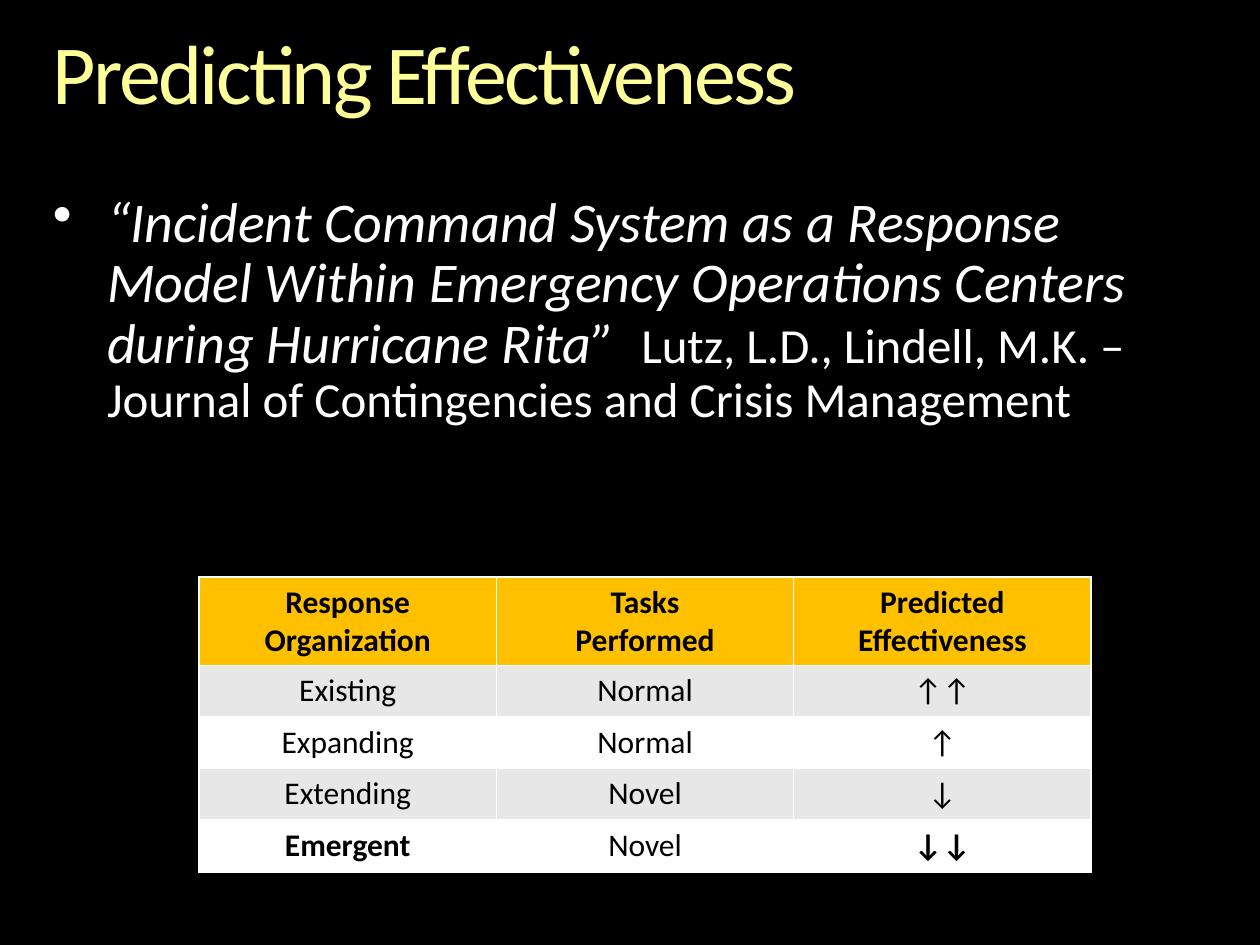
from lxml.etree import SubElement
from pptx import Presentation
from pptx.dml.color import RGBColor
from pptx.enum.text import MSO_ANCHOR, PP_ALIGN
from pptx.oxml import parse_xml
from pptx.oxml.ns import nsdecls, qn
from pptx.util import Inches, Pt

FONT = "Calibri"
TABLE_ROWS = [
    ["Response Organization", "Tasks\nPerformed", "Predicted\nEffectiveness"],
    ["Existing", "Normal", "↑↑"],
    ["Expanding", "Normal", "↑"],
    ["Extending", "Novel", "↓"],
    ["Emergent", "Novel", "↓↓"],
]
BOLD_CELLS = {"Emergent", "↓↓"}


def color(value):
    """Turn a hex string into a colour."""
    return RGBColor.from_string(value)


def style(font, size, value, bold=False):
    """Set the face, size, colour and weight of a font."""
    font.name = FONT
    font.size = Pt(size)
    font.bold = bold
    font.color.rgb = color(value)


def add_text_box(slide, left, top, width, height):
    """Add a wrapping text box without insets and return its paragraph."""
    shape = slide.shapes.add_textbox(*map(Inches, (left, top, width, height)))
    frame = shape.text_frame
    frame.word_wrap = True
    frame.margin_left = frame.margin_right = 0
    frame.margin_top = frame.margin_bottom = 0
    paragraph = frame.paragraphs[0]
    paragraph.line_spacing = 0.9
    return paragraph


def add_title(slide, left, top, width, height):
    """Add the tightly spaced slide title."""
    paragraph = add_text_box(slide, left, top, width, height)
    run = paragraph.add_run()
    run.text = "Predicting Effectiveness"
    run._r.get_or_add_rPr().set("spc", "-150")
    style(paragraph.font, 48, "FFFF99")


def add_citation(slide, left, top, width, height):
    """Add the bulleted article title with its authors and journal."""
    paragraph = add_text_box(slide, left, top, width, height)
    properties = paragraph._p.get_or_add_pPr()
    properties.set("marL", str(Inches(0.43)))
    properties.set("indent", str(Inches(-0.43)))
    SubElement(properties, qn("a:buChar")).set("char", "•")
    style(paragraph.font, 32, "FFFFFF")
    article = paragraph.add_run()
    article.text = ("“Incident Command System as a Response Model Within "
                    "Emergency Operations Centers during Hurricane Rita”  ")
    article.font.italic = True
    source = paragraph.add_run()
    source.text = ("Lutz, L.D., Lindell, M.K. – Journal of Contingencies "
                   "and Crisis Management")
    source.font.size = Pt(28)


def add_borders(cell, value, width):
    """Draw a line on each side of a table cell."""
    properties = cell._tc.get_or_add_tcPr()
    for index, side in enumerate("LRTB"):
        properties.insert(index, parse_xml(
            f'<a:ln{side} {nsdecls("a")} w="{Pt(width)}"><a:solidFill>'
            f'<a:srgbClr val="{value}"/></a:solidFill></a:ln{side}>'))


def add_effectiveness_table(slide, left, top, width, row_height):
    """Add the table of organizations, tasks and predicted effectiveness."""
    row_count, column_count = len(TABLE_ROWS), len(TABLE_ROWS[0])
    table = slide.shapes.add_table(
        row_count, column_count, Inches(left), Inches(top), Inches(width),
        Inches(row_height * row_count)).table
    for row, texts in enumerate(TABLE_ROWS):
        fill = "FFC000" if row == 0 else "E7E7E7" if row % 2 else "FFFFFF"
        for column, text in enumerate(texts):
            cell = table.cell(row, column)
            cell.fill.solid()
            cell.fill.fore_color.rgb = color(fill)
            cell.vertical_anchor = MSO_ANCHOR.TOP
            cell.text = text
            for paragraph in cell.text_frame.paragraphs:
                paragraph.alignment = PP_ALIGN.CENTER
                style(paragraph.font, 18, "000000",
                      row == 0 or text in BOLD_CELLS)
            add_borders(cell, "FFFFFF", 1)


def main():
    """Build and save the slide."""
    presentation = Presentation()
    presentation.slide_width = Inches(10)
    presentation.slide_height = Inches(7.5)
    slide = presentation.slides.add_slide(presentation.slide_layouts[6])
    slide.background.fill.solid()
    slide.background.fill.fore_color.rgb = color("000000")
    add_title(slide, 0.42, 0.25, 9.17, 0.73)
    add_citation(slide, 0.42, 1.54, 9.17, 2.4)
    add_effectiveness_table(slide, 1.58, 4.58, 7.08, 0.41)
    presentation.save("out.pptx")


if __name__ == "__main__":
    main()
